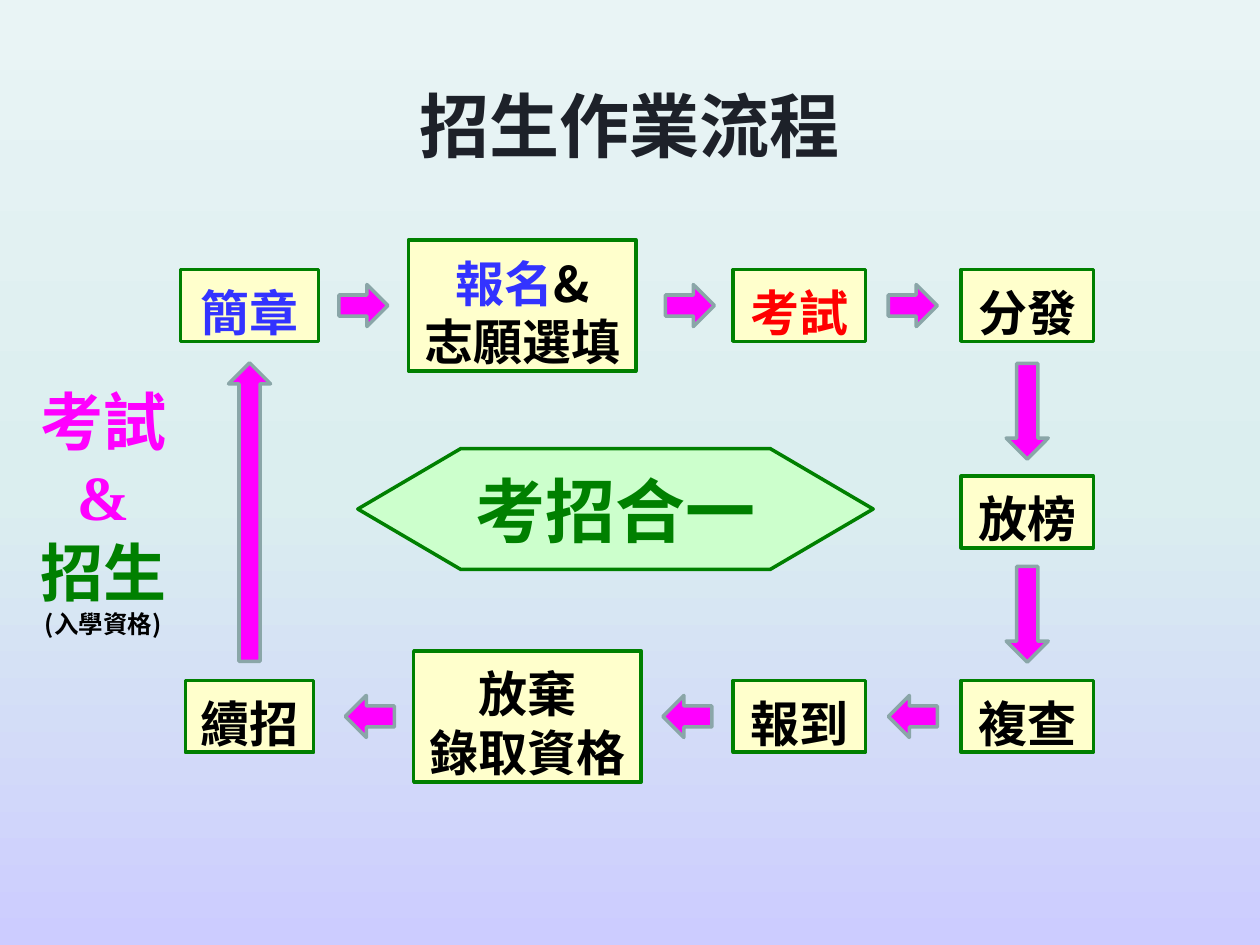
from copy import deepcopy

from lxml.etree import SubElement
from pptx import Presentation
from pptx.dml.color import RGBColor as RGB
from pptx.enum.shapes import MSO_SHAPE as Kind
from pptx.enum.text import MSO_ANCHOR as Anchor, MSO_AUTO_SIZE as Auto, PP_ALIGN as Align
from pptx.oxml.ns import qn
from pptx.util import Pt

HEX = dict(ink="1D2129", black="000000", blue="3333FF", red="FF0000",
           green="008000", pink="FF00FF", cream="FFFFCC", mint="CCFFCC",
           grey="8AA6A8", low="CCCCFF", mid="DBEEEF", top="E9F4F5")
TC, SC = "Noto Sans CJK TC", "Noto Sans CJK SC"


def color(name):
    return RGB.from_string(HEX[name])


def write(frame, lines, size=28, font=TC, tint="black", lead=1.2, drop=0.26, wrap=False):
    """Each line is a list of (text, format) runs; drop lowers text by half its share of an em."""
    frame.word_wrap, frame.auto_size = wrap, Auto.NONE
    frame.vertical_anchor = Anchor.MIDDLE
    frame.margin_top, frame.margin_bottom = Pt(drop * size), 0
    for i, runs in enumerate(lines):
        para = frame.paragraphs[0] if i == 0 else frame.add_paragraph()
        para.alignment = Align.CENTER
        para.space_before = Pt(0)
        for text, look in runs:
            run = para.add_run()
            run.text = text
            face = look.get("font", font)
            high = look.get("size", size)
            run.font.name, run.font.size, run.font.bold = face, Pt(high), True
            run.font.color.rgb = color(look.get("tint", tint))
            SubElement(run.font._element, qn("a:ea")).set("typeface", face)
        if lead:
            para.line_spacing = Pt(lead * high)


class Flow:
    def __init__(self, deck):
        self.slide = deck.slides.add_slide(deck.slide_layouts[5])

    def back(self, stops, angle):
        fill = self.slide.background.fill
        fill.gradient()
        fill.gradient_angle = angle
        first = fill.gradient_stops[0]._gs
        first.addnext(deepcopy(first))
        for stop, (spot, name) in zip(fill.gradient_stops, stops):
            stop.position = spot
            stop.color.rgb = color(name)

    def title(self, text, x, y, w, h):
        head = self.slide.shapes.title
        head.left, head.top, head.width, head.height = map(Pt, (x, y, w, h))
        write(head.text_frame, [[(text, {})]], size=40, tint="ink", drop=0, lead=None, wrap=True)

    def shape(self, kind, cx, cy, w, h, fill, line, turn=0):
        item = self.slide.shapes.add_shape(
            kind, Pt(cx - w / 2), Pt(cy - h / 2), Pt(w), Pt(h))
        item.shadow.inherit = False
        item.fill.solid()
        item.fill.fore_color.rgb = color(fill)
        item.line.color.rgb = color(line)
        item.line.width = Pt(2)
        item.rotation = turn
        return item

    def box(self, cx, cy, w, *lines):
        h = 41 if len(lines) == 1 else 75
        item = self.shape(Kind.RECTANGLE, cx, cy, w, h, "cream", "green")
        write(item.text_frame, lines)

    def arrow(self, cx, cy, size=28, turn=0):
        self.shape(Kind.RIGHT_ARROW, cx, cy, size, 24, "pink", "grey", turn)

    def label(self, x, y, w, h, lines, **look):
        item = self.slide.shapes.add_textbox(Pt(x), Pt(y), Pt(w), Pt(h))
        write(item.text_frame, lines, **look)


def main():
    deck = Presentation()
    deck.slide_width, deck.slide_height = Pt(720), Pt(540)
    flow = Flow(deck)
    flow.back([(0, "low"), (0.48, "mid"), (1, "top")], 90)
    flow.title("招生作業流程", 73.4, 43.2, 572.4, 55.4)

    # Rows and columns of the loop, by centre
    top, mid, low = 174.6, 292.6, 409.4
    left, exam, right = 142.6, 456.8, 587

    # Steps, clockwise
    flow.box(left, top, 79, [("簡章", dict(tint="blue"))])
    flow.box(298.4, top, 130, [("報名", dict(tint="blue")), ("&", {})],
             [("志願選填", {})])
    flow.box(exam, top, 75.6, [("考試", dict(tint="red"))])
    for text, x, y, w in (("分發", right, top, 75.6), ("放榜", right, mid, 75.6),
                          ("複查", right, low, 75.6), ("報到", exam, low, 75.6),
                          ("續招", left, low, 73.4)):
        flow.box(x, y, w, [(text, {})])
    flow.box(301.4, low, 130, [("放棄", {})], [("錄取資格", {})])

    # Arrows between steps
    for x in (207.7, 394.2, 521.6):
        flow.arrow(x, top)
    for y in (235, 351):
        flow.arrow(right, y, 54.7, 90)
    for x in (521.6, 392.8, 211.3):
        flow.arrow(x, low, turn=180)
    flow.arrow(left, mid, 170.6, 270)

    # Side label
    flow.label(12.2, 209.5, 93.6, 154.8, [
        [("考試", {})],
        [("&", dict(font="Times New Roman"))],
        [("招生", dict(tint="green"))],
        [("(入學資格)", dict(size=14, font=TC, tint="black"))],
    ], size=36, font=SC, tint="pink")

    # Centre
    core = flow.shape(Kind.FLOWCHART_PREPARATION, 351.7, 290.9, 294.5, 69.1, "mint", "green")
    write(core.text_frame, [[("考招合一", {})]], size=40, font="Arial",
          tint="green", lead=None, drop=0)

    deck.save("out.pptx")


if __name__ == "__main__":
    main()
